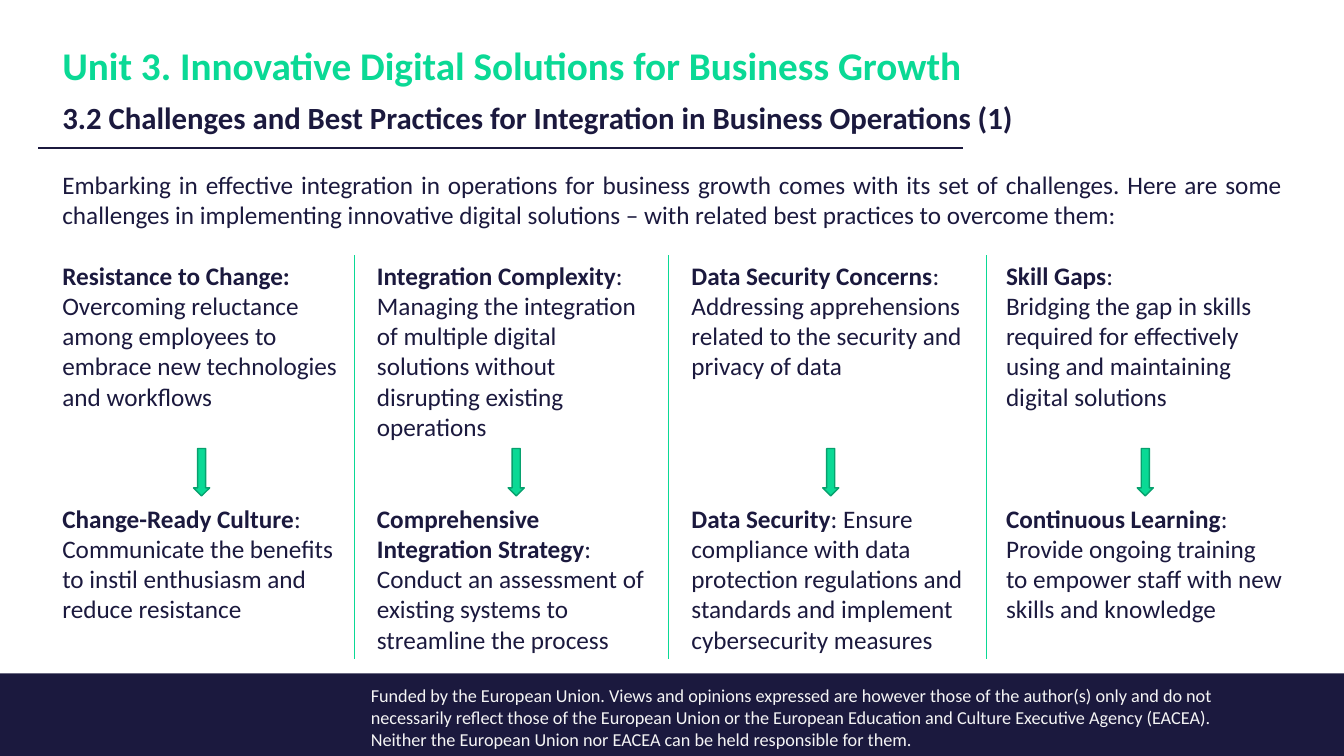
from lxml import etree
from pptx import Presentation
from pptx.dml.color import RGBColor
from pptx.enum.shapes import MSO_CONNECTOR, MSO_SHAPE
from pptx.enum.text import MSO_ANCHOR, PP_ALIGN
from pptx.oxml.ns import qn
from pptx.util import Inches, Pt

COLORS = {"navy": "1B193E", "green": "0AD995", "edge": "07A16E", "pale": "F5F5F5"}
FONT = "Calibri"

TITLE = "Unit 3. Innovative Digital Solutions for Business Growth"
SUBTITLE = "3.2 Challenges and Best Practices for Integration in Business Operations (1)"
INTRO = (
    "Embarking in effective integration in operations for business growth comes with its "
    "set of challenges. Here are some challenges in implementing innovative digital "
    "solutions – with related best practices to overcome them:"
)
DISCLAIMER = (
    "Funded by the European Union. Views and opinions expressed are however those of the "
    "author(s) only and do not necessarily reflect those of the European Union or the "
    "European Education and Culture Executive Agency (EACEA). Neither the European Union "
    "nor EACEA can be held responsible for them."
)
# Each column: challenge paragraphs, then best-practice paragraphs; a run is (text, bold)
COLUMNS = [
    (
        [[("Resistance to Change: ", True),
          ("Overcoming reluctance among employees to embrace new technologies and workflows", False)]],
        [[("Change-Ready Culture", True),
          (": Communicate the benefits to instil enthusiasm and reduce resistance", False)]],
    ),
    (
        [[("Integration Complexity", True),
          (": Managing the integration of multiple digital solutions without disrupting "
           "existing operations", False)]],
        [[("Comprehensive Integration Strategy", True),
          (": Conduct an assessment of existing systems to streamline the process", False)]],
    ),
    (
        [[("Data Security Concerns", True),
          (": Addressing apprehensions related to the security and privacy of data", False)]],
        [[("Data Security", True),
          (": Ensure compliance with data protection regulations and standards and implement "
           "cybersecurity measures", False)]],
    ),
    (
        [[("Skill Gaps", True), (":", False)],
         [("Bridging the gap in skills required for effectively using and maintaining "
           "digital solutions", False)]],
        [[("Continuous Learning", True),
          (": Provide ongoing training to empower staff with new skills and knowledge", False)]],
    ),
]

SLIDE_W, SLIDE_H = 13.33, 7.5
LEFT, COL_PITCH, COL_W = 0.52, 3.12, 2.94
CHALLENGE_TOP, PRACTICE_TOP = 2.53, 4.94
ARROW_OFFSET, ARROW_TOP, ARROW_W, ARROW_H = 1.4, 4.45, 0.16, 0.47
DIVIDERS, DIVIDER_BOTTOM = [3.51, 6.63, 9.78], 6.54
FOOTER_TOP = 6.68


def rgb(name):
    return RGBColor.from_string(COLORS[name])


def add_run(p, text, size, color, bold=False):
    r = p.add_run()
    r.text = text
    r.font.name = FONT
    r.font.size = Pt(size)
    r.font.bold = bold
    r.font.color.rgb = rgb(color)


def add_text(slide, box, paragraphs, size=18, color="navy", align=PP_ALIGN.LEFT):
    tf = slide.shapes.add_textbox(*map(Inches, box)).text_frame
    tf.word_wrap = True
    for i, runs in enumerate(paragraphs):
        p = tf.add_paragraph() if i else tf.paragraphs[0]
        p.alignment = align
        for text, bold in runs:
            add_run(p, text, size, color, bold)


def add_line(slide, x1, y1, x2, y2, color, width):
    line = slide.shapes.add_connector(MSO_CONNECTOR.STRAIGHT, *map(Inches, (x1, y1, x2, y2)))
    line.line.color.rgb = rgb(color)
    line.line.width = Pt(width)
    etree.SubElement(line._element.spPr, qn("a:effectLst"))


def add_filled(slide, kind, box, fill, edge=None):
    sp = slide.shapes.add_shape(kind, *map(Inches, box))
    sp.shadow.inherit = False
    sp.fill.solid()
    sp.fill.fore_color.rgb = rgb(fill)
    if edge:
        sp.line.color.rgb = rgb(edge)
        sp.line.width = Pt(1)
    else:
        sp.line.fill.background()


def add_heading(slide):
    tf = slide.shapes.add_textbox(*map(Inches, (LEFT, 0.5, 9.98, 0.9))).text_frame
    tf.word_wrap = True
    tf.vertical_anchor = MSO_ANCHOR.BOTTOM
    title, subtitle = tf.paragraphs[0], tf.add_paragraph()
    title.line_spacing = subtitle.line_spacing = 0.9
    subtitle.space_before = Pt(10)
    add_run(title, TITLE, 28, "green", True)
    add_run(subtitle, SUBTITLE, 22, "navy", True)


def main():
    prs = Presentation()
    prs.slide_width, prs.slide_height = Inches(SLIDE_W), Inches(SLIDE_H)
    slide = prs.slides.add_slide(prs.slide_layouts[6])

    footer = (0, FOOTER_TOP, SLIDE_W, SLIDE_H - FOOTER_TOP)
    add_filled(slide, MSO_SHAPE.RECTANGLE, footer, "navy")
    add_text(slide, (3.58, 6.74, 8.84, 0.76), [[(DISCLAIMER, False)]], 13, "pale")

    add_line(slide, 0.38, 1.47, 9.55, 1.47, "navy", 1)
    add_heading(slide)
    add_text(slide, (LEFT, 1.63, 12.3, 0.71), [[(INTRO, False)]], align=PP_ALIGN.JUSTIFY)

    for i, (challenge, practice) in enumerate(COLUMNS):
        x = LEFT + i * COL_PITCH
        add_text(slide, (x, CHALLENGE_TOP, COL_W, 1.9), challenge)
        add_text(slide, (x, PRACTICE_TOP, COL_W, 1.63), practice)
        arrow = (x + ARROW_OFFSET, ARROW_TOP, ARROW_W, ARROW_H)
        add_filled(slide, MSO_SHAPE.DOWN_ARROW, arrow, "green", "edge")

    for x in DIVIDERS:
        add_line(slide, x, CHALLENGE_TOP, x, DIVIDER_BOTTOM, "green", 0.5)

    prs.save("out.pptx")


if __name__ == "__main__":
    main()
